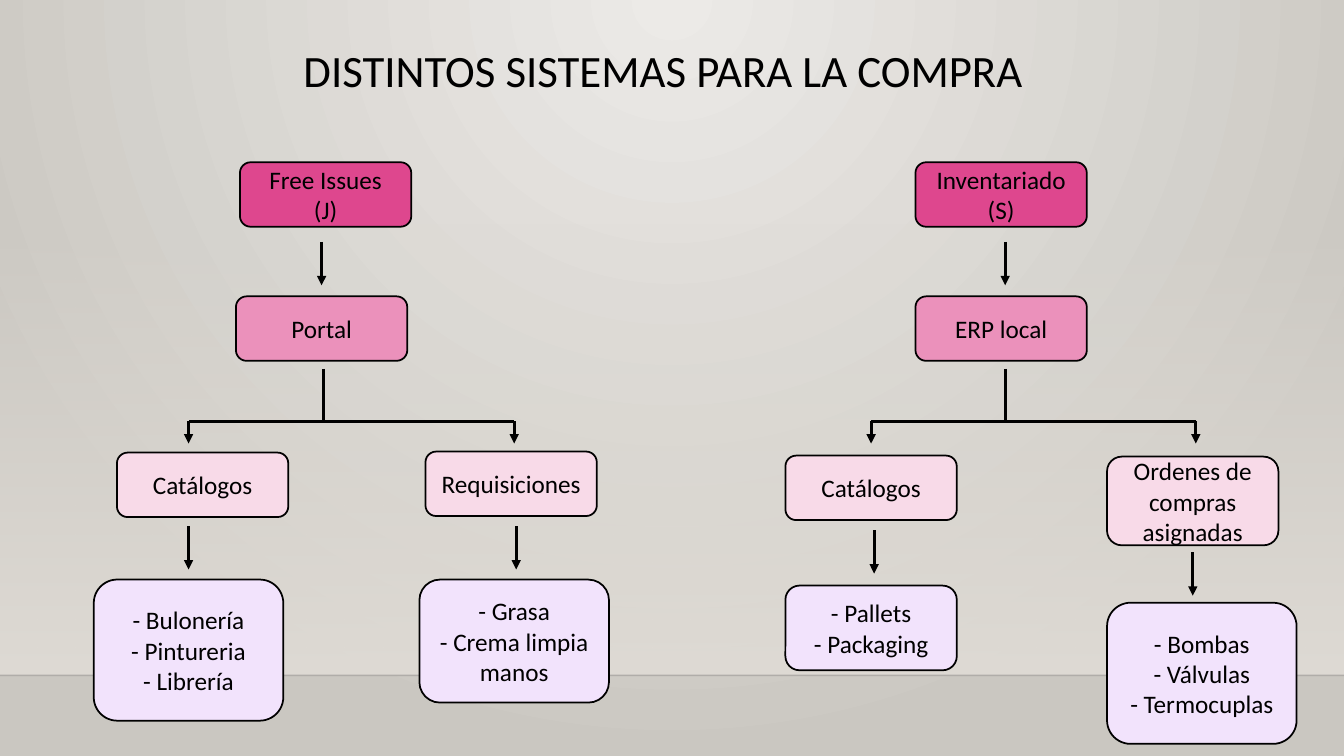
from dataclasses import dataclass
from lxml import etree
from pptx import Presentation
from pptx.dml.color import RGBColor as Rgb
from pptx.enum import shapes, text
from pptx.oxml.ns import qn
from pptx.util import Inches, Pt


@dataclass
class Theme:
    font: str = "Calibri"
    ink: str = "000000"
    rule: str = "000001"
    glow: tuple = ("ECEAE7", "CAC7C1")
    wall: str = "DFDBD5"
    origin: str = "DE478E"
    system: str = "EB91BB"
    method: str = "F8DAE8"
    goods: str = "F2E3FC"
    title: int = 32
    body: int = 18


theme = Theme()
deck = Presentation()
deck.slide_width, deck.slide_height = Inches(13.33), Inches(7.5)
slide = deck.slides.add_slide(deck.slide_layouts[6])
items = slide.shapes


def fade(parent, percent):
    """Set the opacity of the first colour inside an element."""
    color = parent.find(".//" + qn("a:srgbClr"))
    etree.SubElement(color, qn("a:alpha"), val=str(percent * 1000))


def link(x1, y1, x2, y2, arrow=False, color=theme.ink, width=2.25):
    """Draw a straight line, with an arrowhead at its end if asked."""
    line = items.add_connector(shapes.MSO_CONNECTOR.STRAIGHT,
                               Inches(x1), Inches(y1), Inches(x2), Inches(y2))
    line.line.color.rgb = Rgb.from_string(color)
    line.line.width = Pt(width)
    props = line._element.spPr
    if arrow:
        etree.SubElement(props.find(qn("a:ln")), qn("a:tailEnd"), type="triangle")
    etree.SubElement(props, qn("a:effectLst"))
    return line


# Background: a round glow from the top centre
fill = slide.background.fill
fill.gradient()
for stop, color in zip(fill.gradient_stops, theme.glow):
    stop.color.rgb = Rgb.from_string(color)
grad = slide._element.find(".//" + qn("a:gradFill"))
lin = grad.find(qn("a:lin"))
glow = etree.Element(qn("a:path"), path="circle")
etree.SubElement(glow, qn("a:fillToRect"), l="43000", t="0", r="43000", b="100000")
grad.replace(lin, glow)

# Wall that fades in downwards, and the floor line
wall = items.add_shape(shapes.MSO_SHAPE.RECTANGLE, 0, Inches(2.21),
                       Inches(13.33), Inches(4.49))
wall.shadow.inherit = False
wall.line.fill.background()
wall.fill.gradient()
wall.fill.gradient_angle = 270
for stop in wall.fill.gradient_stops:
    stop.color.rgb = Rgb.from_string(theme.wall)
fade(wall._element.spPr, 0)
floor = link(0, 6.7, 13.33, 6.7, color=theme.rule, width=1)
fade(floor._element.spPr, 20)

# Title
title = items.add_textbox(Inches(1.33), Inches(0.43), Inches(10.5), Inches(1.15))
title.text_frame.word_wrap = True
head = title.text_frame.paragraphs[0]
head.text = "DISTINTOS SISTEMAS PARA LA COMPRA"
head.alignment = text.PP_ALIGN.CENTER
head.line_spacing = 0.9
head.font.name, head.font.size = theme.font, Pt(theme.title)
head.font.color.rgb = Rgb.from_string(theme.ink)

# Boxes: left, top, width, height, fill, lines of text
boxes = [
    (2.38, 1.61, 1.7, 0.64, theme.origin, ["Free Issues", "(J)"]),
    (9.08, 1.61, 1.7, 0.64, theme.origin, ["Inventariado", "(S)"]),
    (2.34, 2.94, 1.7, 0.64, theme.system, ["Portal"]),
    (9.08, 2.94, 1.7, 0.64, theme.system, ["ERP local"]),
    (1.16, 4.49, 1.7, 0.64, theme.method, ["Catálogos"]),
    (4.22, 4.48, 1.7, 0.64, theme.method, ["Requisiciones"]),
    (7.79, 4.52, 1.7, 0.64, theme.method, ["Catálogos"]),
    (10.98, 4.53, 1.7, 0.88, theme.method, ["Ordenes de compras asignadas"]),
    (0.93, 5.75, 1.88, 1.4, theme.goods, ["- Bulonería", "- Pintureria", "- Librería"]),
    (4.16, 5.75, 1.88, 1.22, theme.goods, ["- Grasa", "- Crema limpia manos"]),
    (7.79, 5.81, 1.7, 0.84, theme.goods, ["- Pallets", "- Packaging"]),
    (10.98, 5.98, 1.88, 1.4, theme.goods, ["- Bombas", "- Válvulas", "- Termocuplas"]),
]
for left, top, width, height, color, lines in boxes:
    box = items.add_shape(shapes.MSO_SHAPE.ROUNDED_RECTANGLE, Inches(left),
                          Inches(top), Inches(width), Inches(height))
    box.shadow.inherit = False
    box.fill.solid()
    box.fill.fore_color.rgb = Rgb.from_string(color)
    box.line.color.rgb = Rgb.from_string(theme.ink)
    box.line.width = Pt(1.25)
    frame = box.text_frame
    frame.vertical_anchor = text.MSO_ANCHOR.MIDDLE
    frame.text = "\n".join(lines)
    for para in frame.paragraphs:
        para.alignment = text.PP_ALIGN.CENTER
        para.font.name, para.font.size = theme.font, Pt(theme.body)
        para.font.color.rgb = Rgb.from_string(theme.ink)

# Single arrows between levels, all of one length
for x, y in [(3.19, 2.4), (9.97, 2.4), (1.87, 5.22), (5.12, 5.22),
             (8.67, 5.26), (11.83, 5.48)]:
    link(x, y, x, y + 0.43, arrow=True)

# Forks from each system to its two methods
for stem, *ends in [(3.21, 1.87, 5.1), (9.97, 8.64, 11.86)]:
    link(stem, 3.66, stem, 4.18)
    link(ends[1], 4.18, ends[0], 4.18)
    for x in ends:
        link(x, 4.18, x, 4.4, arrow=True)

deck.save("out.pptx")
